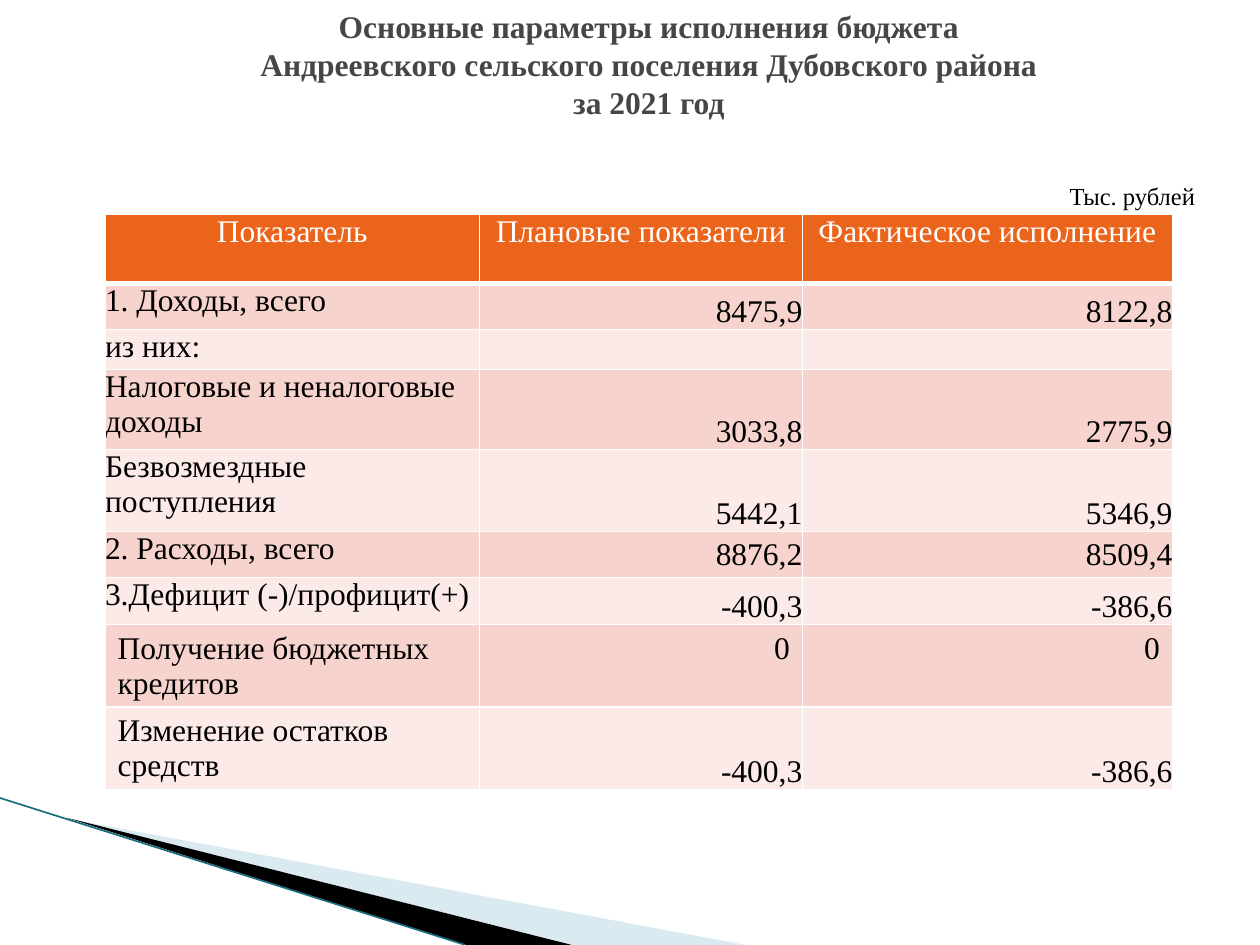
from dataclasses import dataclass

import lxml.etree
import pptx
import pptx.dml.color
import pptx.enum.shapes
import pptx.enum.text
import pptx.oxml.ns
import pptx.util

Pt = pptx.util.Pt
ALIGN = pptx.enum.text.PP_ALIGN
ANCHOR = pptx.enum.text.MSO_ANCHOR


@dataclass(frozen=True)
class Theme:
    """Colours, fonts and type sizes of the slide."""
    font: str = "Times New Roman"
    body: int = 18
    unit: int = 14
    title: str = "464646"
    ink: str = "000000"
    white: str = "FFFFFF"
    header: str = "EB641B"
    bands: tuple = ("F7D3CD", "FBEAE8")
    pale: str = "A0CBDC"
    teal: str = "1A6C80"


THEME = Theme()
HEADINGS = ("Показатель", "Плановые показатели", "Фактическое исполнение")
BUDGET = (
    (26.3, "1. Доходы, всего", "8475,9", "8122,8"),
    (22.9, "из них:", "", ""),
    (45.7, "Налоговые и неналоговые доходы", "3033,8", "2775,9"),
    (46.9, "Безвозмездные поступления", "5442,1", "5346,9"),
    (26.3, "2. Расходы, всего", "8876,2", "8509,4"),
    (26.9, "3.Дефицит (-)/профицит(+)", "-400,3", "-386,6"),
    (46.9, "Получение бюджетных кредитов", "0", "0"),
    (46.9, "Изменение остатков средств", "-400,3", "-386,6"),
)
TITLE = (
    "Основные параметры исполнения бюджета",
    "Андреевского сельского поселения Дубовского района",
    "за 2021 год",
)


def rgb(value):
    """Return a colour object for a hex value."""
    return pptx.dml.color.RGBColor.from_string(value)


def write(paragraph, text, size, color, align, bold=False):
    """Add one styled run to a paragraph."""
    paragraph.alignment = align
    run = paragraph.add_run()
    run.text = text
    run.font.name, run.font.size, run.font.bold = THEME.font, Pt(size), bold
    run.font.color.rgb = rgb(color)


def add_text(slide, box, lines, size, color, align, bold=False, spacing=None):
    """Place a text box with one paragraph per line."""
    frame = slide.shapes.add_textbox(*map(Pt, box)).text_frame
    frame.word_wrap = True
    frame.vertical_anchor = ANCHOR.MIDDLE
    for index, line in enumerate(lines):
        paragraph = frame.add_paragraph() if index else frame.paragraphs[0]
        if spacing:
            paragraph.line_spacing = Pt(spacing)
        write(paragraph, line, size, color, align, bold)


def add_facet(slide, points, color, opacity=None):
    """Draw one filled, unlined facet through the points."""
    start, *rest = [(Pt(x), Pt(y)) for x, y in points]
    builder = slide.shapes.build_freeform(*start)
    builder.add_line_segments(rest, close=True)
    facet = builder.convert_to_shape()
    facet.shadow.inherit = False
    facet.fill.solid()
    facet.fill.fore_color.rgb = rgb(color)
    facet.line.fill.background()
    if opacity:
        fill = facet.fill.fore_color._xFill[0]
        lxml.etree.SubElement(fill, pptx.oxml.ns.qn("a:alpha"), val=str(opacity * 1000))


def add_swoosh(slide, box):
    """Place the layered corner decoration in its box."""
    left, top, _, height = box
    bottom = top + height
    add_facet(slide, [(left + 39.6, top + 12), (left + 426, bottom),
                      (left + 328, bottom)], THEME.pale, 40)
    add_facet(slide, [(left + 38.2, top + 11.3), (left + 327, bottom),
                      (left + 266, bottom)], THEME.ink)
    edge = slide.shapes.add_connector(pptx.enum.shapes.MSO_CONNECTOR.STRAIGHT,
                                      *map(Pt, (left, top, left + 266, bottom)))
    edge.line.color.rgb = rgb(THEME.teal)
    edge.line.width = Pt(0.95)
    lxml.etree.SubElement(edge._element.spPr, pptx.oxml.ns.qn("a:effectLst"))


def style_cell(cell, color, bottom_width=1):
    """Fill a cell and rule its four sides in white."""
    properties = cell._tc.get_or_add_tcPr()
    for side, width in (("L", 1), ("R", 1), ("T", 1), ("B", bottom_width)):
        rule = lxml.etree.SubElement(properties, pptx.oxml.ns.qn(f"a:ln{side}"),
                                     w=str(Pt(width)))
        fill = lxml.etree.SubElement(rule, pptx.oxml.ns.qn("a:solidFill"))
        lxml.etree.SubElement(fill, pptx.oxml.ns.qn("a:srgbClr"), val=THEME.white)
    cell.fill.solid()
    cell.fill.fore_color.rgb = rgb(color)


def clear_margins(cell):
    """Remove the inner margins of a cell."""
    cell.margin_left = cell.margin_right = cell.margin_top = cell.margin_bottom = 0


def add_budget_table(slide, box):
    """Place the budget table in its box."""
    table = slide.shapes.add_table(len(BUDGET) + 1, len(HEADINGS), *map(Pt, box)).table
    for column, width in zip(table.columns, (214, 184.5, 211.5)):
        column.width = Pt(width)
    table.rows[0].height = Pt(39.6)
    for cell, heading in zip(table.rows[0].cells, HEADINGS):
        style_cell(cell, THEME.header, 3)
        clear_margins(cell)
        write(cell.text_frame.paragraphs[0], heading, THEME.body, THEME.white, ALIGN.CENTER)
    for index, (height, *texts) in enumerate(BUDGET):
        row = table.rows[index + 1]
        row.height = Pt(height)
        for column, (cell, text) in enumerate(zip(row.cells, texts)):
            style_cell(cell, THEME.bands[index % 2])
            padded = text == "0" or (column == 0 and index >= 6)
            if not padded:
                clear_margins(cell)
            if not text:
                continue
            paragraph = cell.text_frame.paragraphs[0]
            if column and not padded:
                paragraph.line_spacing = 1.15
                if index != 4:
                    cell.vertical_anchor = ANCHOR.BOTTOM
            write(paragraph, text, THEME.body, THEME.ink,
                  ALIGN.RIGHT if column else ALIGN.LEFT)


def main():
    """Build and save the budget slide."""
    deck = pptx.Presentation()
    deck.slide_width, deck.slide_height = Pt(720), Pt(540)
    slide = deck.slides.add_slide(deck.slide_layouts[6])
    add_swoosh(slide, (0, 456, 426, 84))
    add_budget_table(slide, (60, 122.5, 610, 328.4))
    add_text(slide, (54, 0, 633.6, 73), TITLE, THEME.body, THEME.title,
             ALIGN.CENTER, bold=True, spacing=21.7)
    add_text(slide, (531.5, 99.5, 158.5, 24.5), ["Тыс. рублей"], THEME.unit,
             THEME.ink, ALIGN.RIGHT)
    deck.save("out.pptx")


if __name__ == "__main__":
    main()
